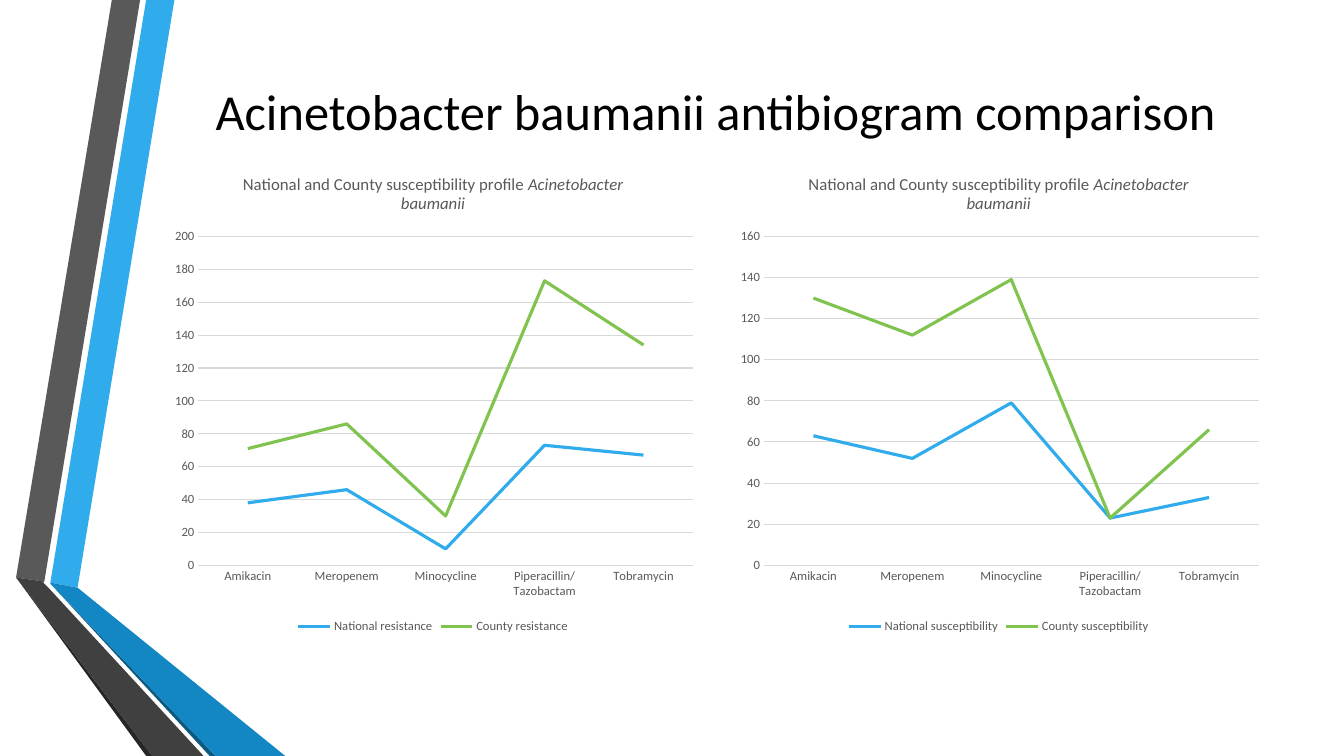
from dataclasses import dataclass

from lxml import etree
from pptx import Presentation
from pptx import util as u
from pptx.chart.chart import Chart
from pptx.chart.data import CategoryChartData
from pptx.dml.color import RGBColor
from pptx.enum import chart as charts
from pptx.enum import text
from pptx.oxml.ns import qn
from pptx.slide import Slide

PX = u.Inches(0.01)
FONT = "Calibri"
GREY, GRID = "595959", "D9D9D9"
SERIES_COLORS = ("30ACEC", "80C34F")
DRUGS = ("Amikacin", "Meropenem", "Minocycline", "Piperacillin/Tazobactam", "Tobramycin")


@dataclass(frozen=True)
class Ribbon:
    color: str
    points: tuple[tuple[int, int], ...]


@dataclass(frozen=True)
class Panel:
    left: int
    measure: str
    national: tuple[int, ...]
    county: tuple[int, ...]


RIBBONS = (
    Ribbon("30ACEC", ((50, 578), (77, 583), (173, 0), (145, 0))),
    Ribbon("595959", ((139, 0), (111, 0), (16, 573), (44, 577))),
    Ribbon("262626", ((16, 573), (145, 750), (151, 750))),
    Ribbon("0C5A82", ((50, 579), (208, 750), (214, 750))),
    Ribbon("1287C3", ((50, 579), (214, 750), (283, 750), (77, 583), (50, 578))),
    Ribbon("404040", ((202, 750), (48, 583), (43, 578), (44, 577), (16, 573), (151, 750))),
)
PANELS = (
    Panel(162, "resistance", (38, 46, 10, 73, 67), (33, 40, 20, 100, 67)),
    Panel(723, "susceptibility", (63, 52, 79, 23, 33), (67, 60, 60, 0, 33)),
)


def rgb(color: str) -> RGBColor:
    return RGBColor.from_string(color)


def set_font(font: text.MSO_ANCHOR, size: float, color: str) -> None:
    font.name, font.size, font.bold = FONT, u.Pt(size), False
    font.color.rgb = rgb(color)


def set_line(line, color: str, width: float) -> None:
    line.color.rgb = rgb(color)
    line.width = u.Pt(width)


def add_ribbon(slide: Slide, ribbon: Ribbon) -> None:
    builder = slide.shapes.build_freeform(*ribbon.points[0], scale=PX)
    builder.add_line_segments(ribbon.points[1:], close=True)
    shape = builder.convert_to_shape()
    shape.shadow.inherit = False
    shape.fill.solid()
    shape.fill.fore_color.rgb = rgb(ribbon.color)
    shape.line.fill.background()


def write_title(slide: Slide) -> None:
    title = slide.shapes.title
    title.left, title.top, title.width, title.height = (n * PX for n in (162, 75, 1096, 69))
    frame = title.text_frame
    frame.text = "Acinetobacter baumanii antibiogram comparison"
    frame.word_wrap = True
    frame.vertical_anchor = text.MSO_ANCHOR.MIDDLE
    paragraph = frame.paragraphs[0]
    paragraph.alignment = text.PP_ALIGN.CENTER
    set_font(paragraph.font, 36, "000000")


def write_chart_title(chart: Chart) -> None:
    paragraph = chart.chart_title.text_frame.paragraphs[0]
    set_font(paragraph.font, 12, GREY)
    paragraph.add_run().text = "National and County susceptibility profile "
    species = paragraph.add_run()
    species.text = "Acinetobacter baumanii"
    species.font.italic = True
    chart.chart_title.include_in_layout = False


def format_axes(chart: Chart) -> None:
    for axis in (chart.category_axis, chart.value_axis):
        axis.major_tick_mark = axis.minor_tick_mark = charts.XL_TICK_MARK.NONE
        set_font(axis.tick_labels.font, 9, GREY)
    set_line(chart.category_axis.format.line, GRID, 0.75)
    chart.value_axis.format.line.fill.background()
    set_line(chart.value_axis.major_gridlines.format.line, GRID, 0.75)


def place_plot(chart: Chart) -> None:
    """Fix the inner plot area, as fractions of the chart."""
    area = chart.plots[0]._element.getparent()
    for old in area.findall(qn("c:layout")):
        area.remove(old)
    layout = etree.Element(qn("c:layout"))
    area.insert(0, layout)
    manual = etree.SubElement(layout, qn("c:manualLayout"))
    settings = {"layoutTarget": "inner", "xMode": "edge", "yMode": "edge",
                "x": "0.065", "y": "0.17", "w": "0.917", "h": "0.68"}
    for tag, value in settings.items():
        etree.SubElement(manual, qn(f"c:{tag}")).set("val", value)


def add_panel(slide: Slide, panel: Panel) -> None:
    data = CategoryChartData()
    data.categories = DRUGS
    data.add_series(f"National {panel.measure}", panel.national)
    data.add_series(f"County {panel.measure}", panel.county)
    box = (n * PX for n in (panel.left, 153, 535, 480))
    chart = slide.shapes.add_chart(charts.XL_CHART_TYPE.LINE_STACKED, *box, data).chart
    set_font(chart.font, 10, "000000")
    write_chart_title(chart)
    format_axes(chart)
    place_plot(chart)
    chart.has_legend = True
    chart.legend.position = charts.XL_LEGEND_POSITION.BOTTOM
    chart.legend.include_in_layout = False
    set_font(chart.legend.font, 9, GREY)
    chart.plots[0].vary_by_categories = False
    for series, color in zip(chart.plots[0].series, SERIES_COLORS):
        series.smooth = False
        series.marker.style = charts.XL_MARKER_STYLE.NONE
        set_line(series.format.line, color, 2.25)


def main() -> None:
    presentation = Presentation()
    presentation.slide_width, presentation.slide_height = 1333 * PX, 750 * PX
    slide = presentation.slides.add_slide(presentation.slide_layouts[5])
    for ribbon in RIBBONS:
        add_ribbon(slide, ribbon)
    write_title(slide)
    for panel in PANELS:
        add_panel(slide, panel)
    presentation.save("out.pptx")


if __name__ == "__main__":
    main()
